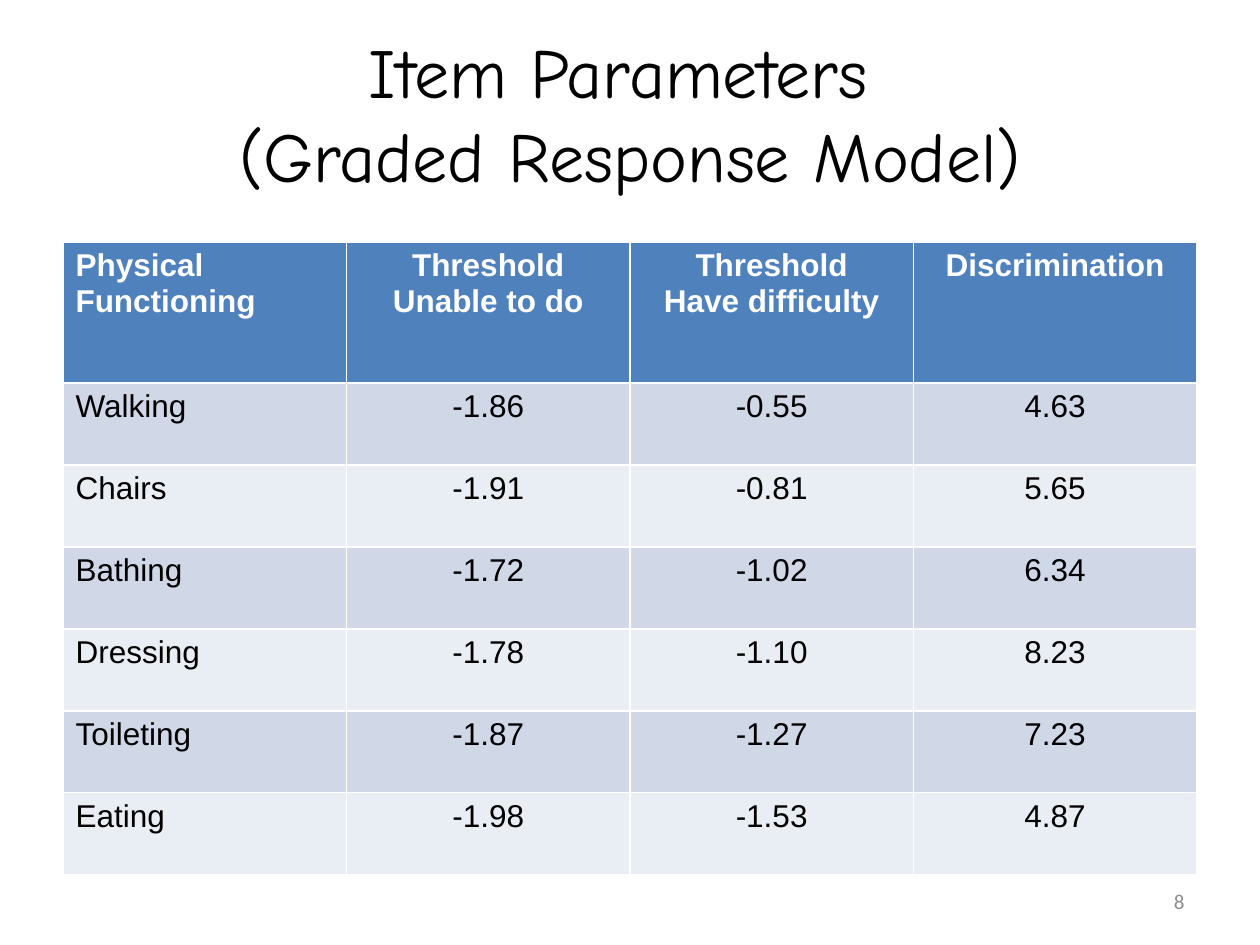
from pptx import Presentation
from pptx.dml.color import RGBColor
from pptx.enum.text import MSO_ANCHOR, PP_ALIGN
from pptx.util import Pt

PX = 914400 // 126
LEFT, CENTER, RIGHT = PP_ALIGN.LEFT, PP_ALIGN.CENTER, PP_ALIGN.RIGHT
MIDDLE = MSO_ANCHOR.MIDDLE

BLACK = RGBColor(0x00, 0x00, 0x00)
WHITE = RGBColor(0xFF, 0xFF, 0xFF)
GRAY = RGBColor(0x8C, 0x8C, 0x8C)
HEADER_BLUE = RGBColor(0x4F, 0x81, 0xBD)
BANDS = (RGBColor(0xD0, 0xD8, 0xE8), RGBColor(0xE9, 0xED, 0xF4))

HEADINGS = ("Physical Functioning", "Threshold\nUnable to do",
            "Threshold\nHave difficulty", "Discrimination")
ITEMS = (
    ("Walking", "-1.86", "-0.55", "4.63"),
    ("Chairs", "-1.91", "-0.81", "5.65"),
    ("Bathing", "-1.72", "-1.02", "6.34"),
    ("Dressing", "-1.78", "-1.10", "8.23"),
    ("Toileting", "-1.87", "-1.27", "7.23"),
    ("Eating", "-1.98", "-1.53", "4.87"),
)
HEADER_HEIGHT, ITEM_HEIGHT = 141, 82


def emu(*lengths):
    """Turn px lengths into EMU."""
    return [length * PX for length in lengths]


def write(frame, text, font_name, size, color, align, bold=False):
    """Fill a text frame with evenly formatted paragraphs."""
    frame.text = text
    for paragraph in frame.paragraphs:
        paragraph.alignment = align
        font = paragraph.font
        font.name, font.size, font.bold = font_name, Pt(size), bold
        font.color.rgb = color


def place_title(slide, box):
    """Place the slide heading in its placeholder."""
    title = slide.shapes.title
    title.left, title.top, title.width, title.height = emu(*box)
    title.text_frame.vertical_anchor = MIDDLE
    write(title.text_frame, "Item Parameters \v(Graded Response Model)",
          "Comic Neue", 40, BLACK, CENTER)


def place_parameters(slide, box):
    """Place the table of item parameters."""
    rows = (HEADINGS,) + ITEMS
    parameters = slide.shapes.add_table(len(rows), len(HEADINGS), *emu(*box)).table
    for column in parameters.columns:
        column.width = box[2] * PX // len(HEADINGS)
    for r, values in enumerate(rows):
        header = r == 0
        parameters.rows[r].height = (HEADER_HEIGHT if header else ITEM_HEIGHT) * PX
        for c, value in enumerate(values):
            cell = parameters.cell(r, c)
            cell.fill.solid()
            cell.fill.fore_color.rgb = HEADER_BLUE if header else BANDS[(r - 1) % 2]
            write(cell.text_frame, value, "Arial", 18, WHITE if header else BLACK,
                  CENTER if c else LEFT, header)


def place_page_number(slide, box):
    """Place the page number at the lower right."""
    frame = slide.shapes.add_textbox(*emu(*box)).text_frame
    frame.word_wrap = True
    frame.vertical_anchor = MIDDLE
    write(frame, "8", "Calibri", 12, GRAY, RIGHT)


def main():
    """Build and save the slide."""
    deck = Presentation()
    deck.slide_width, deck.slide_height = emu(1260, 945)
    slide = deck.slides.add_slide(deck.slide_layouts[5])
    place_title(slide, (0, 34, 1260, 158))
    place_parameters(slide, (63, 242, 1134, HEADER_HEIGHT + ITEM_HEIGHT * len(ITEMS)))
    place_page_number(slide, (903, 876, 294, 50))
    deck.save("out.pptx")


if __name__ == "__main__":
    main()
